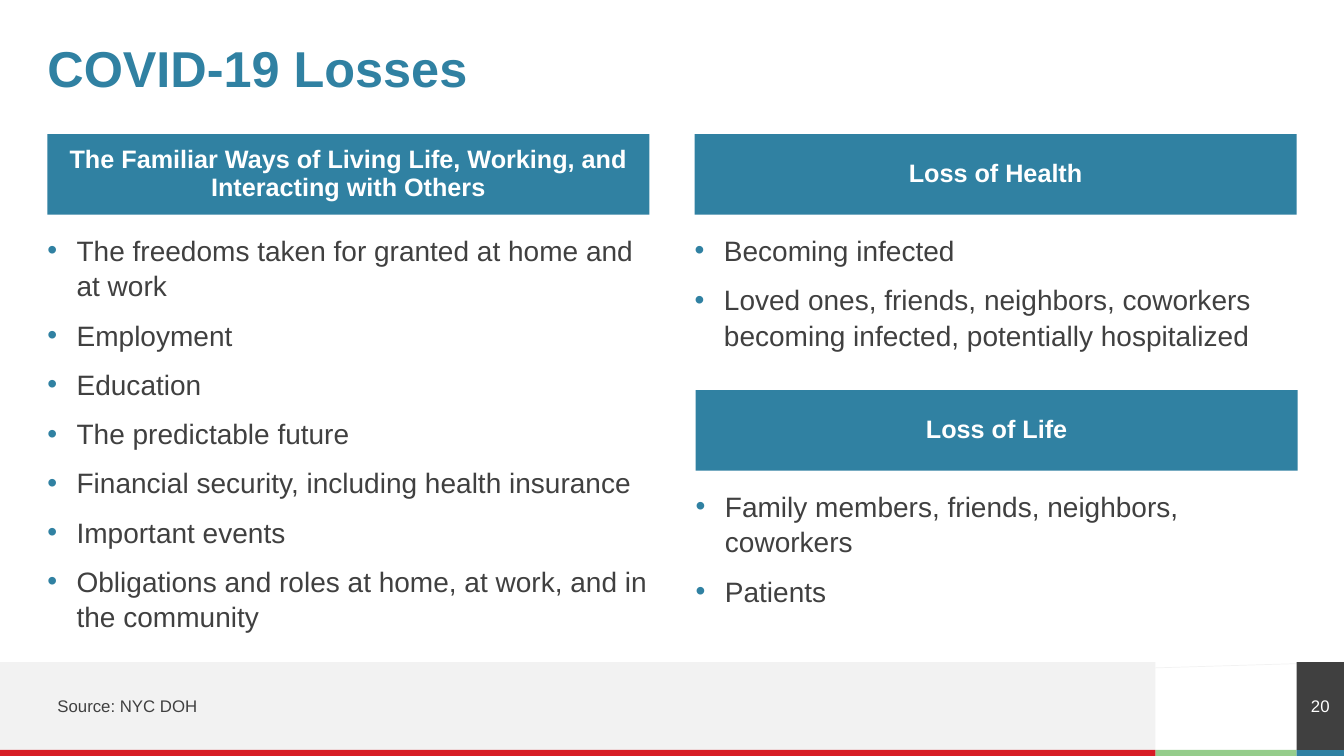
"""Build the COVID-19 Losses slide: three headed bullet lists above a footer band."""
from lxml import etree
from pptx import Presentation, util as u
from pptx.dml import color
from pptx.enum import shapes, text
from pptx.oxml import ns

BLUE, DARK, PALE, WHITE = "3081A2", "404040", "F2F2F2", "FFFFFF"


def rgb(value):
    return color.RGBColor.from_string(value)


def add_box(page, place, lines=(), size=20, ink=DARK, fill=None, bold=False,
            align=None, anchor=text.MSO_ANCHOR.MIDDLE, spacing=None, bullets=False):
    place = [u.Inches(length) for length in place]
    if fill:
        box = page.shapes.add_shape(shapes.MSO_SHAPE.RECTANGLE, *place)
        box.shadow.inherit = False
        box.fill.solid()
        box.fill.fore_color.rgb = rgb(fill)
        box.line.fill.background()
    else:
        box = page.shapes.add_textbox(*place)
    frame = box.text_frame
    frame.word_wrap = True
    frame.vertical_anchor = anchor
    frame.margin_left = frame.margin_right = frame.margin_top = frame.margin_bottom = 0
    for index, line in enumerate(lines):
        para = frame.add_paragraph() if index else frame.paragraphs[0]
        para.text = line
        para.alignment = align
        para.line_spacing = spacing
        if bullets:
            if index:
                para.space_before = u.Pt(10)
            props = para._p.get_or_add_pPr()
            props.set("marL", str(u.Inches(0.29)))
            props.set("indent", str(-u.Inches(0.29)))
            tint = etree.SubElement(props, ns.qn("a:buClr"))
            etree.SubElement(tint, ns.qn("a:srgbClr"), val=BLUE)
            etree.SubElement(props, ns.qn("a:buFont"), typeface="Arial")
            etree.SubElement(props, ns.qn("a:buChar"), char="•")
        para.font.name = "Arial"
        para.font.size = u.Pt(size)
        para.font.bold = bold
        para.font.color.rgb = rgb(ink)
    return box


deck = Presentation()
deck.slide_width, deck.slide_height = u.Inches(13.33), u.Inches(7.5)
page = deck.slides.add_slide(deck.slide_layouts[6])

footer_parts = [
    ((11.46, 7.44, 1.4, 0.06), "95CD8B"),
    ((0, 6.57, 11.46, 0.87), PALE),
    ((0, 7.44, 11.46, 0.06), "D71D24"),
    ((12.86, 7.44, 0.47, 0.06), BLUE),
]
for place, fill in footer_parts:
    add_box(page, place, fill=fill)

rule = page.shapes.add_connector(
    shapes.MSO_CONNECTOR.STRAIGHT,
    u.Inches(13.33), u.Inches(6.57), u.Inches(0), u.Inches(6.97))
rule.line.color.rgb = rgb(PALE)
rule.line.width = u.Pt(0.5)
etree.SubElement(rule._element.spPr, ns.qn("a:effectLst"))

add_box(page, (0.47, 0.47, 12.4, 0.47), ["COVID-19 Losses"], size=36, ink=BLUE,
        bold=True, spacing=0.9)
add_box(page, (12.86, 6.57, 0.47, 0.87), ["20"], size=12, ink=WHITE, fill=DARK,
        align=text.PP_ALIGN.CENTER)

sections = [
    (0.47, 1.33, 3.83,
     "The Familiar Ways of Living Life, Working, and Interacting with Others",
     ["The freedoms taken for granted at home and at work",
      "Employment",
      "Education",
      "The predictable future",
      "Financial security, including health insurance",
      "Important events",
      "Obligations and roles at home, at work, and in the community"]),
    (6.89, 1.33, 1.34, "Loss of Health",
     ["Becoming infected",
      "Loved ones, friends, neighbors, coworkers becoming infected, "
      "potentially hospitalized"]),
    (6.9, 3.87, 1.34, "Loss of Life",
     ["Family members, friends, neighbors, coworkers",
      "Patients"]),
]
for left, top, height, heading, losses in sections:
    add_box(page, (left, top, 5.97, 0.8), [heading], size=18, ink=WHITE, fill=BLUE,
            bold=True, align=text.PP_ALIGN.CENTER, spacing=0.9)
    add_box(page, (left, top + 0.97, 5.97, height), losses,
            anchor=text.MSO_ANCHOR.TOP, spacing=1.05, bullets=True)

add_box(page, (0.57, 6.85, 1.5, 0.3), ["Source: NYC DOH"], size=12)

deck.save("out.pptx")
